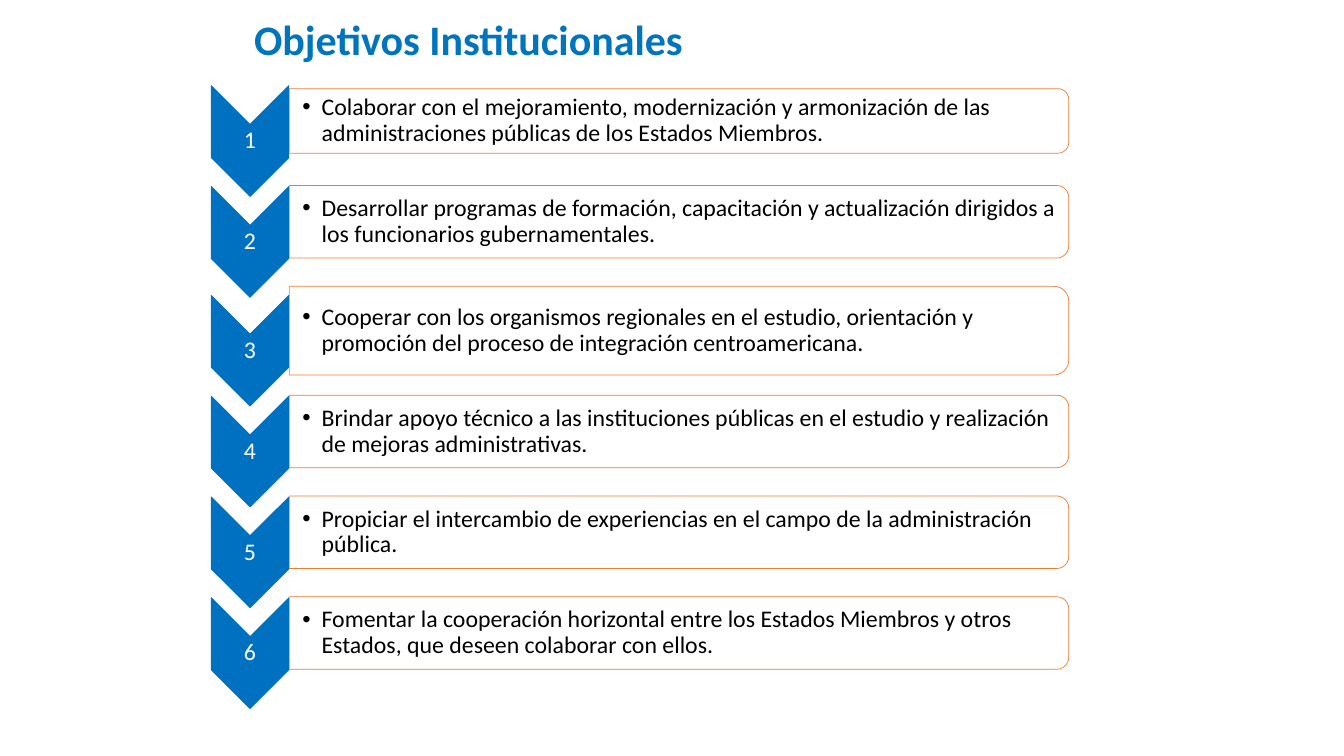
import pptx
import pptx.util
import pptx.dml.color
import pptx.enum.shapes
import pptx.enum.text
import pptx.oxml.ns
from lxml import etree

# Content: each goal with the height of its bar in px
TITLE = "Objetivos Institucionales"
GOALS = [
    ("Colaborar con el mejoramiento, modernización y armonización de las "
     "administraciones públicas de los Estados Miembros.", 64),
    ("Desarrollar programas de formación, capacitación y actualización "
     "dirigidos a los funcionarios gubernamentales.", 72),
    ("Cooperar con los organismos regionales en el estudio, orientación y "
     "promoción del proceso de integración centroamericana.", 88),
    ("Brindar apoyo técnico a las instituciones públicas en el estudio y "
     "realización de mejoras administrativas.", 72),
    ("Propiciar el intercambio de experiencias en el campo de la "
     "administración pública.", 72),
    ("Fomentar la cooperación horizontal entre los Estados Miembros y otros "
     "Estados, que deseen colaborar con ellos.", 72),
]


class Theme:
    font = "Calibri"
    title, blue, orange = "0074BD", "0070C0", "ED7D31"
    white, black = "FFFFFF", "000000"
    head, body, line = 30, 17, 0.5


# Layout in px, 100 to the inch
SCALE = 9144
WIDE, HIGH = 1333, 750
FIRST, PITCH, BAR = 120, 100, 72       # first bar centre, row step, usual bar
ARROW_X, ARROW_W, ARROW_H, DROP = 248, 77, 110, 20
BAR_X, BAR_W = 287, 773

KIND = pptx.enum.shapes.MSO_SHAPE
ALIGN = pptx.enum.text.PP_ALIGN
ANCHOR = pptx.enum.text.MSO_ANCHOR


def px(num):
    return pptx.util.Emu(round(num * SCALE))


def rgb(code):
    return pptx.dml.color.RGBColor.from_string(code)


def write(para, text, size, color, bold=False):
    run = para.add_run()
    run.text = text
    run.font.name = Theme.font
    run.font.size = pptx.util.Pt(size)
    run.font.bold = bold
    run.font.color.rgb = rgb(color)


def turned(kind, mid_x, mid_y, wide, high, fill, line):
    """Add a shape turned by 90 degrees; wide and high are as seen."""
    shape = slide.shapes.add_shape(
        kind, px(mid_x - high / 2), px(mid_y - wide / 2), px(high), px(wide))
    shape.rotation = 90
    shape.shadow.inherit = False
    shape.fill.solid()
    shape.fill.fore_color.rgb = rgb(fill)
    shape.line.color.rgb = rgb(line)
    shape.line.width = pptx.util.Pt(Theme.line)
    return shape


def label(left, mid_y, wide, high, inset):
    """Add a text box centred on mid_y and return its paragraph."""
    box = slide.shapes.add_textbox(
        px(left), px(mid_y - high / 2), px(wide), px(high))
    frame = box.text_frame
    frame.word_wrap = True
    frame.vertical_anchor = ANCHOR.MIDDLE
    frame.margin_left = px(inset)
    frame.margin_right = frame.margin_top = frame.margin_bottom = px(1)
    return frame.paragraphs[0]


def bullet(para):
    props = para._p.get_or_add_pPr()
    props.set("marL", str(px(19)))
    props.set("indent", str(px(-19)))
    tag = pptx.oxml.ns.qn
    etree.SubElement(props, tag("a:buFont")).set("typeface", "Arial")
    etree.SubElement(props, tag("a:buChar")).set("char", "•")


def fade(shape, share):
    color = next(shape._element.spPr.iter(pptx.oxml.ns.qn("a:srgbClr")))
    alpha = etree.SubElement(color, pptx.oxml.ns.qn("a:alpha"))
    alpha.set("val", str(share * 1000))


# Slide and title
deck = pptx.Presentation()
deck.slide_width, deck.slide_height = px(WIDE), px(HIGH)
slide = deck.slides.add_slide(deck.slide_layouts[5])
title = slide.shapes.title
title.left, title.top = px(242), px(8)
title.width, title.height = px(850), px(125)
title.text_frame.auto_size = pptx.enum.text.MSO_AUTO_SIZE.NONE
title.text_frame.vertical_anchor = ANCHOR.TOP
para = title.text_frame.paragraphs[0]
para.alignment = ALIGN.LEFT
write(para, TITLE, Theme.head, Theme.title, True)

# Rows: a taller bar pushes itself and later rows down
mid = FIRST
for num, (goal, high) in enumerate(GOALS, 1):
    mid += max(0, (high - BAR) / 2)
    turned(KIND.CHEVRON, ARROW_X, mid + DROP, ARROW_W, ARROW_H,
           Theme.blue, Theme.blue)
    para = label(ARROW_X - ARROW_W / 2, mid + DROP, ARROW_W, 33, 1)
    para.alignment = ALIGN.CENTER
    para.line_spacing = 0.9
    write(para, str(num), Theme.body, Theme.white)

    bar = turned(KIND.ROUND_2_SAME_RECTANGLE, BAR_X + BAR_W / 2, mid,
                 BAR_W, high, Theme.white, Theme.orange)
    fade(bar, 90)
    para = label(BAR_X, mid, BAR_W - 3, high - 7, 13)
    bullet(para)
    para.alignment = ALIGN.LEFT
    para.line_spacing = 0.9
    write(para, goal, Theme.body, Theme.black)
    mid += PITCH

deck.save("out.pptx")
